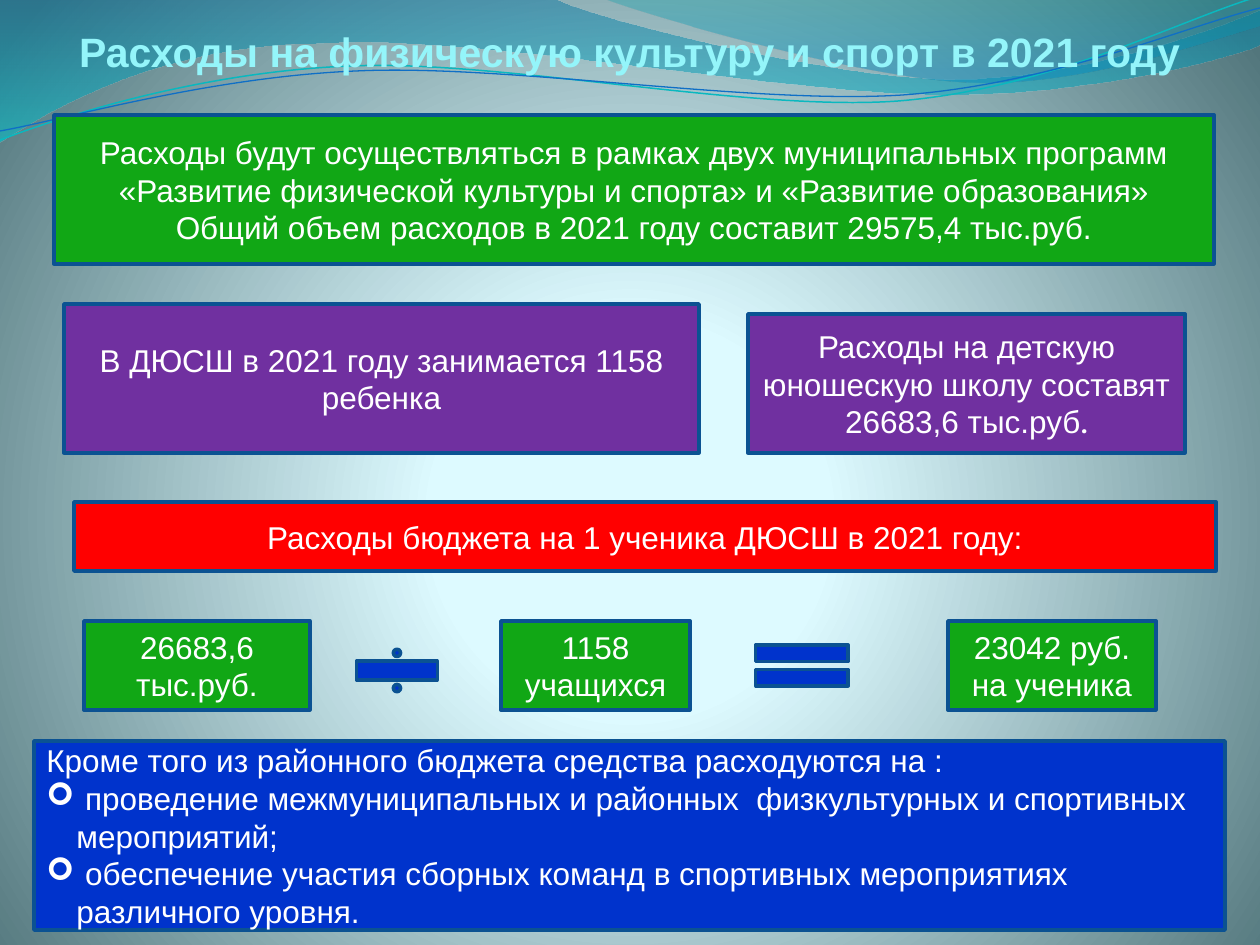
"""Build the slide on 2021 spending for physical culture and sport."""
from pptx import Presentation, util as u
from pptx.dml.color import RGBColor
from pptx.enum import shapes, text
from pptx.oxml import parse_xml
from pptx.oxml.ns import nsdecls, qn

PX = 914400 / 126
KIND = shapes.MSO_SHAPE
THEME = {
    "green": "11A715", "purple": "7030A0", "red": "FF0000", "blue": "0033CC",
    "edge": "0B5292", "white": "FFFFFF", "title": "94F5FA",
    "font": "Arial", "dot": "Vollkorn", "mark": "Wingdings",
    "head": 23.4, "body": 18, "rim": 2,
}
BACK = [(0, "DEFBFF", 100), (25, "DDFAFF", 100), (100, "52767C", 100)]
GLOW = ('<a:path path="circle"><a:fillToRect l="10000" t="110000" '
        'r="10000" b="100000"/></a:path>')
DOWN = '<a:lin ang="5400000" scaled="1"/>'
WAVES = [
    ([(0, -1), (554, -1), (600, 21, 837, 79, 955, 79),
      (1075, 79, 1207, 33, 1260, 11), (1261, 45),
      (1239, 55, 1096, 96, 940, 94), (784, 94, 481, 35, 324, 43),
      (163, 44, 58, 105, -1, 142)],
     [(0, "0074A1", 45), (100, "00C6CF", 55)]),
    ([(604, -1), (641, 14, 859, 78, 969, 82),
      (1079, 87, 1211, 40, 1260, 26), (1260, 0)],
     [(0, "00A1A9", 30), (80, "008BBF", 45)]),
]
LINES = [
    ([(0, 140), (60, 117, 199, 72, 349, 66), (498, 59, 747, 112, 898, 101),
      (1050, 89, 1182, 19, 1257, -3)], "0AB8BF", 0.85),
    ([(0, 131), (59, 121, 207, 77, 357, 71), (508, 64, 752, 105, 903, 95),
      (1053, 84, 1187, 26, 1260, 8)], "0F6FC6", 0.75),
]
TITLE = "Расходы на физическую культуру и спорт в 2021 году"
SCHOOL = "Расходы на детскую юношескую школу составят 26683,6 тыс.руб"
BOXES = [
    ((54, 115, 1160, 149), "green", 0,
     ["Расходы будут осуществляться в рамках двух муниципальных программ "
      "«Развитие физической культуры и спорта» и «Развитие образования» "
      "Общий объем расходов в 2021 году составит 29575,4 тыс.руб."]),
    ((64, 304, 635, 149), "purple", -17,
     ["В ДЮСШ в 2021 году занимается 1158 ребенка"]),
    ((748, 314, 437, 139), "purple", 0, [SCHOOL]),
    ((74, 502, 1142, 69), "red", 0,
     ["Расходы бюджета на 1 ученика ДЮСШ в 2021 году:"]),
    ((84, 621, 226, 89), "green", -36, ["26683,6 тыс.руб."]),
    ((501, 621, 189, 89), "green", 0, ["1158", "учащихся"]),
    ((948, 621, 208, 89), "green", 0, ["23042 руб. на ученика"]),
]
SIGNS = [((342, 631, 110, 79), KIND.MATH_DIVIDE, (0.235, 0.059, 0.046)),
         ((739, 631, 126, 69), KIND.MATH_EQUAL, ())]
NOTE = (34, 741, 1191, 189)
NEEDS = ["Кроме того из районного бюджета средства расходуются на :",
         " проведение межмуниципальных и районных  физкультурных и спортивных "
         "мероприятий;",
         " обеспечение участия сборных команд в спортивных мероприятиях "
         "различного уровня."]


def emu(*vals):
    return [u.Emu(round(v * PX)) for v in vals]


def hue(name):
    return RGBColor.from_string(THEME.get(name, name))


def grade(fill, root, stops, tail):
    fill.gradient()
    old = root.find(".//" + qn("a:gradFill"))
    marks = "".join(
        f'<a:gs pos="{pos * 1000}"><a:srgbClr val="{tint}">'
        f'<a:alpha val="{part * 1000}"/></a:srgbClr></a:gs>'
        for pos, tint, part in stops)
    new = parse_xml(f'<a:gradFill {nsdecls("a")} rotWithShape="1">'
                    f'<a:gsLst>{marks}</a:gsLst>{tail}</a:gradFill>')
    old.getparent().replace(old, new)


def draw(slide, steps, close):
    dots = [emu(*step[i:i + 2]) for step in steps for i in range(0, len(step), 2)]
    pen = slide.shapes.build_freeform(*dots[0])
    pen.add_line_segments(dots[1:], close=close)
    shape = pen.convert_to_shape()
    shape.shadow.inherit = False
    legs = iter(shape._element.findall(".//" + qn("a:lnTo")))
    for step in steps[1:]:
        part = [next(legs) for _ in range(len(step) // 2)]
        if len(part) == 3:
            curve = parse_xml(f'<a:cubicBezTo {nsdecls("a")}/>')
            part[0].addprevious(curve)
            for leg in part:
                curve.append(leg[0])
                leg.getparent().remove(leg)
    return shape


def block(slide, kind, area, tint):
    shape = slide.shapes.add_shape(kind, *emu(*area))
    shape.shadow.inherit = False
    shape.fill.solid()
    shape.fill.fore_color.rgb = hue(tint)
    shape.line.color.rgb = hue("edge")
    shape.line.width = u.Pt(THEME["rim"])
    return shape


def write(shape, rows, align, size="body", tint="white"):
    frame = shape.text_frame
    frame.word_wrap = True
    frame.vertical_anchor = text.MSO_ANCHOR.MIDDLE
    frame.text = "\n".join(rows)
    for para in frame.paragraphs:
        para.alignment = align
        para.font.name = THEME["font"]
        para.font.size = u.Pt(THEME[size])
        para.font.color.rgb = hue(tint)
    return frame


def indent(para, left, first):
    props = para._p.get_or_add_pPr()
    for name, gap in zip(("marL", "indent"), emu(left, first)):
        props.set(name, str(int(gap)))
    return props


def bullet(para):
    props = indent(para, 30, -30)
    for tag in (f'buFont {nsdecls("a")} typeface="{THEME["mark"]}"',
                f'buChar {nsdecls("a")} char="➢"'):
        props.insert_element_before(parse_xml(f"<a:{tag}/>"),
                                    "a:tabLst", "a:defRPr", "a:extLst")


def main():
    deck = Presentation()
    deck.slide_width, deck.slide_height = emu(1260, 945)
    slide = deck.slides.add_slide(deck.slide_layouts[6])
    grade(slide.background.fill, slide._element, BACK, GLOW)

    for steps, stops in WAVES:
        wave = draw(slide, steps, True)
        grade(wave.fill, wave._element, stops, DOWN)
        wave.line.fill.background()
    for steps, tint, width in LINES:
        line = draw(slide, steps, False)
        line.fill.background()
        line.line.color.rgb = hue(tint)
        line.line.width = u.Pt(width)

    mid = text.PP_ALIGN.CENTER
    head = slide.shapes.add_textbox(*emu(44, 0, 1171, 76))
    frame = write(head, [TITLE], mid, "head", "title")
    frame.vertical_anchor = text.MSO_ANCHOR.BOTTOM
    frame.margin_left = frame.margin_right = frame.margin_bottom = 0
    frame.paragraphs[0].font.bold = True

    for area, tint, shift, rows in BOXES:
        frame = write(block(slide, KIND.RECTANGLE, area, tint), rows, mid)
        if shift:
            indent(frame.paragraphs[0], 0, shift)
        if rows == [SCHOOL]:
            dot = frame.paragraphs[0].add_run()
            dot.text = "."
            dot.font.name = THEME["dot"]
    for area, kind, tweaks in SIGNS:
        sign = block(slide, kind, area, "blue")
        for i, tweak in enumerate(tweaks):
            sign.adjustments[i] = tweak

    note = block(slide, KIND.FLOWCHART_PROCESS, NOTE, "blue")
    frame = write(note, NEEDS, text.PP_ALIGN.LEFT)
    for para in frame.paragraphs[1:]:
        bullet(para)
    deck.save("out.pptx")


if __name__ == "__main__":
    main()
